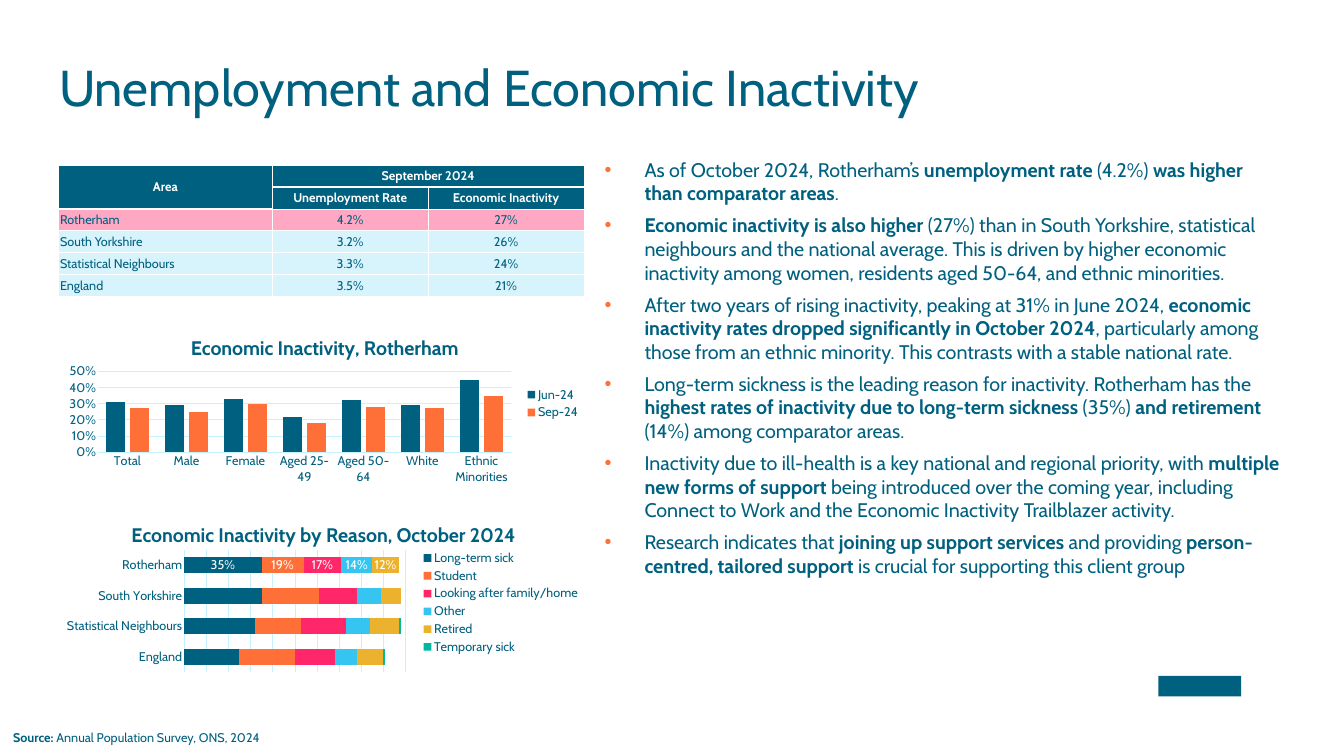
from dataclasses import dataclass

from lxml import etree
from pptx import Presentation
from pptx.chart.data import CategoryChartData
from pptx.dml.color import RGBColor
from pptx.enum.chart import XL_CHART_TYPE as CT
from pptx.enum.chart import XL_LABEL_POSITION, XL_LEGEND_POSITION, XL_TICK_MARK
from pptx.enum.shapes import MSO_SHAPE
from pptx.enum.text import MSO_ANCHOR, MSO_AUTO_SIZE
from pptx.enum.text import PP_ALIGN as AL
from pptx.oxml.ns import qn
from pptx.util import Inches, Pt


@dataclass(frozen=True)
class Theme:
    font: str = "Cabin"
    teal: str = "00607F"
    orange: str = "FF7038"
    pink: str = "FF266A"
    sky: str = "36C5F0"
    gold: str = "ECB22E"
    green: str = "00B7A1"
    rose: str = "FFA8C3"
    pale: str = "D7F3FC"
    grid: str = "C6F1FF"
    white: str = "FFFFFF"
    title: float = 72
    body: float = 28.1
    chart_title: float = 28
    small: float = 18


T = Theme()
AREAS = ["Rotherham", "South Yorkshire", "Statistical Neighbours", "England"]
RATES = [("4.2%", "27%"), ("3.2%", "26%"), ("3.3%", "24%"), ("3.5%", "21%")]
BULLETS = [
    "As of October 2024, Rotherham’s **unemployment rate **(4.2%) **was higher than comparator areas**.",
    "**Economic inactivity is also higher **(27%) than in South Yorkshire, statistical neighbours and the "
    "national average. This is driven by higher economic inactivity among women, residents aged 50-64, "
    "and ethnic minorities.",
    "After two years of rising inactivity, peaking at 31% in June 2024, **economic inactivity rates dropped "
    "significantly in October 2024**, particularly among those from an ethnic minority. This contrasts with "
    "a stable national rate.",
    "Long-term sickness is the leading reason for inactivity. Rotherham has the **highest rates of inactivity "
    "due to long-term sickness **(35%) **and retirement **(14%) among comparator areas.",
    "Inactivity due to ill-health is a key national and regional priority, with **multiple new forms of "
    "support** being introduced over the coming year, including Connect to Work and the Economic Inactivity "
    "Trailblazer activity.",
    "Research indicates that **joining up support services** and providing **person-centred, tailored "
    "support** is crucial for supporting this client group",
]
GROUPS = ["Total", "Male", "Female", "Aged 25-49", "Aged 50-64", "White", "Ethnic Minorities"]
BY_GROUP = [
    ("Jun-24", [0.31, 0.29, 0.33, 0.22, 0.32, 0.29, 0.45], T.teal),
    ("Sep-24", [0.27, 0.25, 0.30, 0.18, 0.28, 0.27, 0.35], T.orange),
]
BY_REASON = [
    ("Long-term sick", [0.35, 0.35, 0.32, 0.25], T.teal),
    ("Student", [0.19, 0.26, 0.21, 0.25], T.orange),
    ("Looking after family/home", [0.17, 0.17, 0.20, 0.18], T.pink),
    ("Other", [0.14, 0.11, 0.11, 0.10], T.sky),
    ("Retired", [0.12, 0.09, 0.13, 0.12], T.gold),
    ("Temporary sick", [0, 0, 0.01, 0.01], T.green),
]


def rgb(value):
    return RGBColor.from_string(value)


def set_font(font, size, color=T.teal, bold=False):
    font.name, font.size, font.bold = T.font, Pt(size), bold
    font.color.rgb = rgb(color)


def write(p, text, size=T.small, color=T.teal, bold=False, align=AL.LEFT):
    """Fill a paragraph; parts between ** marks are bold."""
    p.alignment = align
    for i, part in enumerate(text.split("**")):
        if part:
            r = p.add_run()
            r.text = part
            set_font(r.font, size, color, bold or i % 2 == 1)


def emu(box):
    return [Inches(v) for v in box]


def set_insets(tf, left=0, top=0, right=0, bottom=0):
    tf.margin_left, tf.margin_top, tf.margin_right, tf.margin_bottom = emu((left, top, right, bottom))


def add_title(slide, box):
    sp = slide.shapes.title
    sp.left, sp.top, sp.width, sp.height = emu(box)
    tf = sp.text_frame
    tf.auto_size, tf.vertical_anchor = MSO_AUTO_SIZE.NONE, MSO_ANCHOR.TOP
    set_insets(tf, top=0.08)
    p = tf.paragraphs[0]
    p.line_spacing = Pt(85)
    write(p, "Unemployment and Economic Inactivity", size=T.title)


def add_bullet(p, indent):
    pPr = p._p.get_or_add_pPr()
    pPr.set("marL", str(Inches(indent)))
    pPr.set("indent", str(-Inches(indent)))
    color = etree.SubElement(pPr, qn("a:buClr"))
    etree.SubElement(color, qn("a:srgbClr"), val=T.orange)
    etree.SubElement(pPr, qn("a:buFont"), typeface="Arial")
    etree.SubElement(pPr, qn("a:buChar"), char="•")


def add_findings(slide, box):
    tf = slide.shapes.add_textbox(*emu(box)).text_frame
    tf.word_wrap = True
    set_insets(tf)
    for i, text in enumerate(BULLETS):
        p = tf.add_paragraph() if i else tf.paragraphs[0]
        add_bullet(p, 0.79)
        p.space_after = Pt(12)
        write(p, text, size=T.body)


def set_borders(cell, bottom):
    tcPr = cell._tc.get_or_add_tcPr()
    for i, (side, width) in enumerate(zip("LRTB", (1, 1, 1, bottom))):
        ln = etree.Element(qn(f"a:ln{side}"), w=str(Pt(width)))
        fill = etree.SubElement(ln, qn("a:solidFill"))
        etree.SubElement(fill, qn("a:srgbClr"), val=T.white)
        tcPr.insert(i, ln)


def add_rates_table(slide, box):
    rows = [("Area", "September 2024", ""), ("", "Unemployment Rate", "Economic Inactivity")]
    rows += [(area, *rates) for area, rates in zip(AREAS, RATES)]
    table = slide.shapes.add_table(len(rows), 3, *emu(box)).table
    for column, width in zip(table.columns, (4.24, 3.09, 3.09)):
        column.width = Inches(width)
    for i, row in enumerate(rows):
        header = i < 2
        fill = T.teal if header else T.rose if i == 2 else T.pale
        for j, text in enumerate(row):
            cell = table.cell(i, j)
            cell.fill.solid()
            cell.fill.fore_color.rgb = rgb(fill)
            cell.vertical_anchor = MSO_ANCHOR.MIDDLE
            set_insets(cell, 0.03, 0.01, 0.03)
            set_borders(cell, 3 if i == 0 else 1)
            write(cell.text_frame.paragraphs[0], text, color=T.white if header else T.teal,
                  bold=header, align=AL.CENTER if header or j else AL.LEFT)
    table.cell(0, 0).merge(table.cell(1, 0))
    table.cell(0, 1).merge(table.cell(0, 2))


def set_layout(parent, **place):
    """Place a chart part by fractions of the chart's size."""
    for old in parent.findall(qn("c:layout")):
        parent.remove(old)
    layout = etree.Element(qn("c:layout"))
    manual = etree.SubElement(layout, qn("c:manualLayout"))
    if "w" in place:
        etree.SubElement(manual, qn("c:layoutTarget"), val="inner")
    for key in "xy":
        etree.SubElement(manual, qn(f"c:{key}Mode"), val="edge")
    for key, value in place.items():
        etree.SubElement(manual, qn(f"c:{key}"), val=str(value))
    overlay = parent.find(qn("c:overlay"))
    parent.insert(0 if overlay is None else parent.index(overlay), layout)


def add_bar_chart(slide, box, kind, title, cats, series, overlap, title_at, legend_at, plot_at):
    data = CategoryChartData(number_format="0%")
    data.categories = cats
    for name, values, _ in series:
        data.add_series(name, values)
    chart = slide.shapes.add_chart(kind, *emu(box), data).chart
    set_font(chart.font, T.small)
    # Title and legend
    heading = chart.chart_title
    write(heading.text_frame.paragraphs[0], title, size=T.chart_title, bold=True, align=AL.CENTER)
    heading.include_in_layout = False
    chart.has_legend = True
    chart.legend.position = XL_LEGEND_POSITION.RIGHT
    chart.legend.include_in_layout = False
    set_font(chart.legend.font, T.small)
    # Axes
    cat, val = chart.category_axis, chart.value_axis
    for axis in (cat, val):
        axis.major_tick_mark = axis.minor_tick_mark = XL_TICK_MARK.NONE
        set_font(axis.tick_labels.font, T.small)
    for line in (cat.format.line, val.major_gridlines.format.line):
        line.color.rgb, line.width = rgb(T.grid), Pt(0.75)
    val.format.line.fill.background()
    val.minimum_scale, val.major_unit = 0, 0.1
    val.tick_labels.number_format, val.tick_labels.number_format_is_linked = "0%", False
    # Bars
    plot = chart.plots[0]
    plot.gap_width, plot.overlap, plot.vary_by_categories = 90, overlap, False
    for s, (_, _, color) in zip(plot.series, series):
        s.format.fill.solid()
        s.format.fill.fore_color.rgb = rgb(color)
    # Placement
    set_layout(heading._element, **title_at)
    set_layout(chart.legend._element, **legend_at)
    set_layout(chart._chartSpace.chart.plotArea, **plot_at)
    return chart


def add_group_chart(slide, box):
    chart = add_bar_chart(
        slide, box, CT.COLUMN_CLUSTERED, "Economic Inactivity, Rotherham", GROUPS, BY_GROUP, -27,
        dict(x=0.245, y=0.07), dict(x=0.885, y=0.39), dict(x=0.075, y=0.313, w=0.786, h=0.475))
    chart.value_axis.maximum_scale = 0.5


def add_reason_chart(slide, box):
    chart = add_bar_chart(
        slide, box, CT.BAR_STACKED, "Economic Inactivity by Reason, October 2024", AREAS, BY_REASON, 100,
        dict(x=0.135, y=0.07), dict(x=0.69, y=0.25), dict(x=0.242, y=0.263, w=0.421, h=0.72))
    chart.category_axis.reverse_order = True
    chart.value_axis.maximum_scale = 1
    chart.value_axis.visible = False
    # Only the Rotherham bar is labelled
    for s in list(chart.plots[0].series)[:-1]:
        label = s.points[0].data_label
        set_font(label.font, T.small, T.white)
        label.position = XL_LABEL_POSITION.CENTER


def add_footer(slide, source_box, mark_box):
    tf = slide.shapes.add_textbox(*emu(source_box)).text_frame
    tf.word_wrap = True
    write(tf.paragraphs[0], "**Source: **Annual Population Survey, ONS, 2024")
    # Plain block in the logo's place
    sp = slide.shapes.add_shape(MSO_SHAPE.RECTANGLE, *emu(mark_box))
    sp.shadow.inherit = False
    sp.fill.solid()
    sp.fill.fore_color.rgb = rgb(T.teal)
    sp.line.fill.background()


def main():
    prs = Presentation()
    prs.slide_width, prs.slide_height = Inches(26.65), Inches(15)
    slide = prs.slides.add_slide(prs.slide_layouts[5])
    add_title(slide, (1.17, 1.05, 22.99, 1.72))
    add_findings(slide, (11.99, 3.13, 13.5, 10.26))
    add_rates_table(slide, (1.16, 3.28, 10.42, 2.6))
    add_group_chart(slide, (1.16, 6.32, 10.42, 3.36))
    add_reason_chart(slide, (1.13, 10.03, 10.42, 3.36))
    add_footer(slide, (0.16, 14.44, 13.32, 0.4), (22.97, 13.41, 1.64, 0.41))
    prs.save("out.pptx")


if __name__ == "__main__":
    main()
